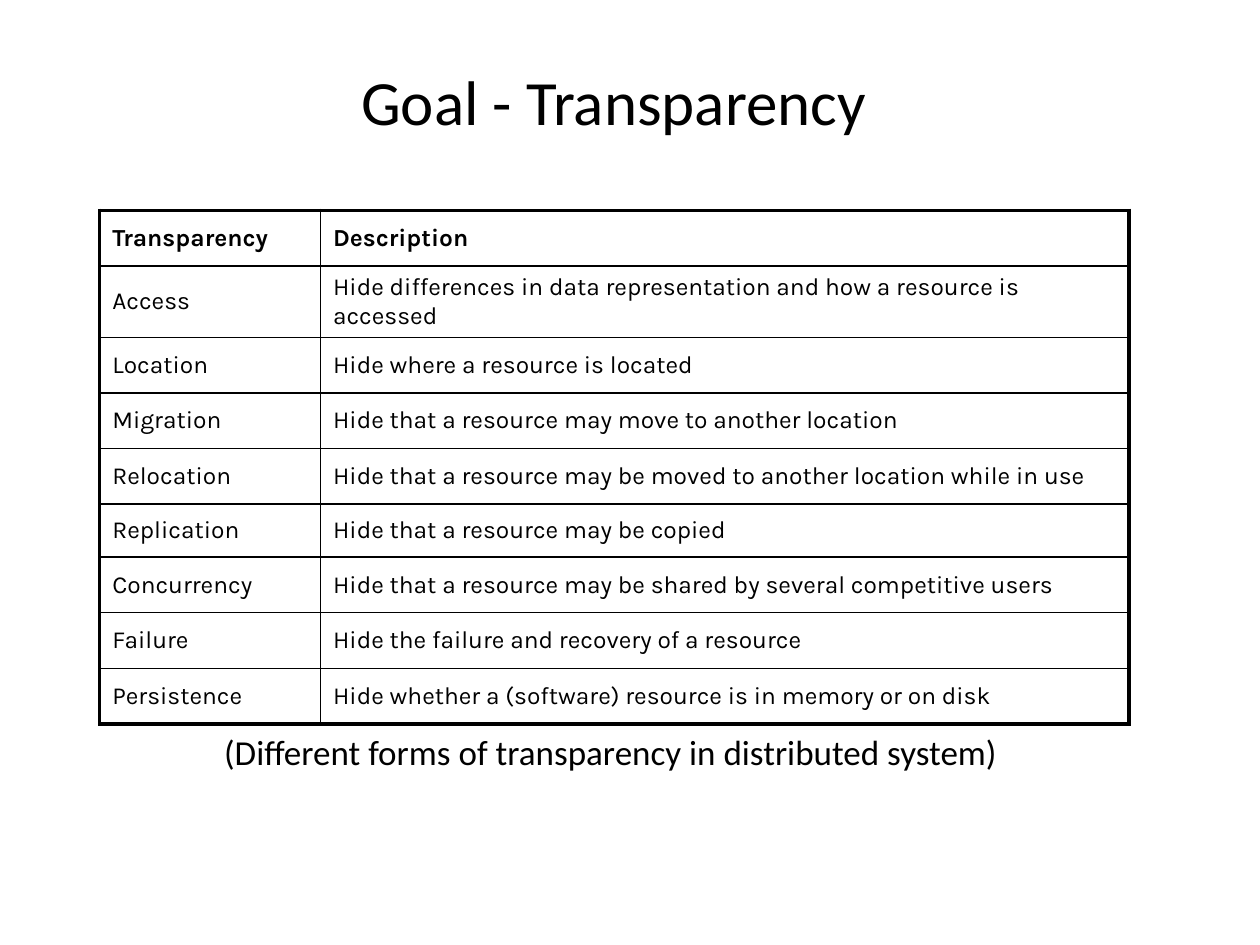
from dataclasses import dataclass

from lxml import etree
from pptx import Presentation
from pptx import util as u
from pptx.dml.color import RGBColor
from pptx.enum import text
from pptx.oxml import ns


@dataclass(frozen=True)
class Theme:
    ink: str = "000000"
    heading_font: str = "Calibri"
    table_font: str = "Karla"
    title_size: int = 36
    caption_size: int = 20
    cell_size: int = 14
    outer_line: float = 2.25
    inner_line: float = 1


THEME = Theme()

ROWS = [
    ("Transparency", "Description"),
    ("Access", "Hide differences in data representation and how a resource is accessed"),
    ("Location", "Hide where a resource is located"),
    ("Migration", "Hide that a resource may move to another location"),
    ("Relocation", "Hide that a resource may be moved to another location while in use"),
    ("Replication", "Hide that a resource may be copied"),
    ("Concurrency", "Hide that a resource may be shared by several competitive users"),
    ("Failure", "Hide the failure and recovery of a resource"),
    ("Persistence", "Hide whether a (software) resource is in memory or on disk"),
]
COLUMN_WIDTHS = (4.45, 16.3)
ROW_HEIGHT = 1.12
REPLICATION_HEIGHT = 1.07


def style_paragraph(p, font, size, bold=False):
    p.font.name = font
    p.font.size = u.Pt(size)
    p.font.bold = bold
    p.font.color.rgb = RGBColor.from_string(THEME.ink)


def add_centered_text(s, words, left, top, width, height, size, anchor):
    sp = s.shapes.add_textbox(u.Cm(left), u.Cm(top), u.Cm(width), u.Cm(height))
    tf = sp.text_frame
    tf.word_wrap = True
    tf.vertical_anchor = anchor
    p = tf.paragraphs[0]
    p.text = words
    p.alignment = text.PP_ALIGN.CENTER
    style_paragraph(p, THEME.heading_font, size)


def set_border(cell, side, width):
    """Draw one side of a cell; side is L, R, T or B."""
    tc_pr = cell._tc.get_or_add_tcPr()
    line = etree.SubElement(tc_pr, ns.qn(f"a:ln{side}"), w=str(u.Pt(width)))
    fill = etree.SubElement(line, ns.qn("a:solidFill"))
    etree.SubElement(fill, ns.qn("a:srgbClr"), val=THEME.ink)


def add_grid(s, left, top):
    """Add the table with a heavy frame and thin inner lines."""
    n_rows, n_cols = len(ROWS), len(COLUMN_WIDTHS)
    frame = s.shapes.add_table(n_rows, n_cols, u.Cm(left), u.Cm(top),
                               u.Cm(sum(COLUMN_WIDTHS)), u.Cm(n_rows * ROW_HEIGHT))
    table = frame.table
    table.first_row = table.horz_banding = False
    for column, width in zip(table.columns, COLUMN_WIDTHS):
        column.width = u.Cm(width)
    for i, row in enumerate(ROWS):
        height = REPLICATION_HEIGHT if row[0] == "Replication" else ROW_HEIGHT
        table.rows[i].height = u.Cm(height)
        for j, words in enumerate(row):
            cell = table.cell(i, j)
            cell.vertical_anchor = text.MSO_ANCHOR.MIDDLE
            p = cell.text_frame.paragraphs[0]
            p.text = words
            style_paragraph(p, THEME.table_font, THEME.cell_size, bold=i == 0)
            on_frame = {"L": j == 0, "R": j == n_cols - 1,
                        "T": i == 0, "B": i == n_rows - 1}
            for side, outer in on_frame.items():
                set_border(cell, side, THEME.outer_line if outer else THEME.inner_line)
            cell.fill.background()


def main():
    prs = Presentation()
    prs.slide_width, prs.slide_height = u.Cm(25.4), u.Cm(19.05)
    s = prs.slides.add_slide(prs.slide_layouts[6])
    add_centered_text(s, "Goal - Transparency", 1.57, 0.43, 21.6, 3.18,
                      THEME.title_size, text.MSO_ANCHOR.MIDDLE)
    add_centered_text(s, "(Different forms of transparency in distributed system)",
                      0.56, 14.6, 23.5, 1.1, THEME.caption_size, text.MSO_ANCHOR.TOP)
    add_grid(s, 2.01, 4.24)
    prs.save("out.pptx")


if __name__ == "__main__":
    main()
